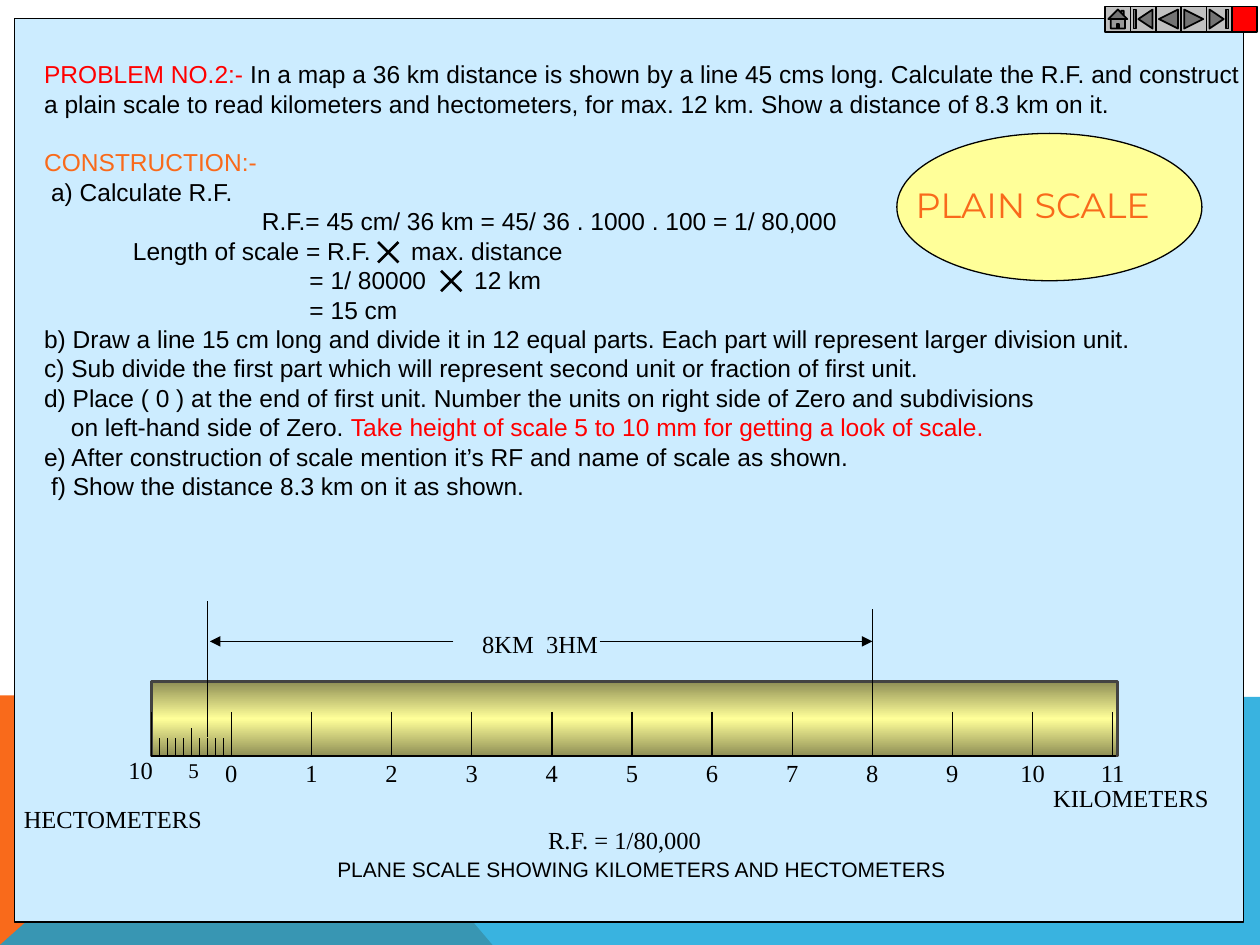
from copy import deepcopy
from dataclasses import dataclass

from lxml import etree
from pptx import Presentation
from pptx import util as u
from pptx.dml.color import RGBColor
from pptx.enum import shapes, text
from pptx.oxml.ns import qn

KIND = shapes.MSO_SHAPE


@dataclass(frozen=True)
class Theme:
    black: str = "000000"
    red: str = "FF0000"
    orange: str = "F96A1B"
    blue: str = "08A1D9"
    sky: str = "CCECFF"
    yellow: str = "FFFF99"
    olive: str = "8F8F56"
    edge: str = "434342"
    grey: str = "C0C0C0"
    sans: str = "Arial"
    serif: str = "Times New Roman"
    title: str = "Montserrat"
    small: int = 12
    body: int = 14
    large: int = 20
    pitch: float = 16.8


T = Theme()
LEFT, UNIT, BASE = 3.05, 1.615, 15.24
ZERO = LEFT + UNIT

STEPS = [
    ([("PROBLEM NO.2:-", T.red),
      (" In a map a 36 km distance is shown by a line 45 cms long. "
       "Calculate the R.F. and construct", T.black)], ()),
    ("a plain scale to read kilometers and hectometers, for max. 12 km. "
     "Show a distance of 8.3 km on it.", ()),
    ([("CONSTRUCTION:-", T.orange)], ()),
    ("\ta) Calculate R.F.", (0.14,)),
    ("\tR.F.= 45 cm/ 36 km = 45/ 36 . 1000 . 100 = 1/ 80,000", (4.39,)),
    ("\tLength of scale = R.F.\tmax. distance", (1.79, 7.4)),
    ("\t= 1/ 80000\t12 km", (5.35, 8.67)),
    ("\t= 15 cm", (5.35,)),
    ("b) Draw a line 15 cm long and divide it in 12 equal parts. "
     "Each part will represent larger division unit.", ()),
    ("c) Sub divide the first part which will represent second unit "
     "or fraction of first unit.", ()),
    ("d) Place ( 0 ) at the end of first unit. Number the units on right side "
     "of Zero and subdivisions", ()),
    ([("\ton left-hand side of Zero. ", T.black),
      ("Take height of scale 5 to 10 mm for getting a look of scale.", T.red)],
     (0.54,)),
    ("e) After construction of scale mention it’s RF and name of scale "
     "as shown.", ()),
    ("\tf) Show the distance 8.3 km on it as shown.", (0.14,)),
]


def rgb(code):
    return RGBColor.from_string(code)


def cms(*nums):
    return [u.Cm(n) for n in nums]


def paint(shape, fill, line=None, width=0.75):
    shape.shadow.inherit = False
    shape.fill.solid()
    shape.fill.fore_color.rgb = rgb(fill)
    if line:
        shape.line.color.rgb = rgb(line)
        shape.line.width = u.Pt(width)
    else:
        shape.line.fill.background()


def block(slide, kind, box, fill, line=T.black, width=0.75):
    shape = slide.shapes.add_shape(kind, *cms(*box))
    paint(shape, fill, line, width)
    return shape


def outline(slide, points, fill, alpha=None):
    spots = [tuple(cms(*p)) for p in points]
    form = slide.shapes.build_freeform(*spots[0])
    form.add_line_segments(spots[1:], close=True)
    shape = form.convert_to_shape()
    paint(shape, fill)
    if alpha:
        color = shape._element.spPr.find(".//" + qn("a:srgbClr"))
        etree.SubElement(color, qn("a:alpha")).set("val", str(alpha * 1000))


def shade(shape, colors):
    shape.fill.gradient()
    shape.fill.gradient_angle = 90
    stops = shape._element.spPr.find(".//" + qn("a:gsLst"))
    stops.append(deepcopy(stops[-1]))
    for i, (stop, color) in enumerate(zip(shape.fill.gradient_stops, colors)):
        stop.color.rgb = rgb(color)
        stop.position = i / 2


def rule(slide, x1, y1, x2, y2, width=0.75, arrow=False):
    line = slide.shapes.add_connector(
        shapes.MSO_CONNECTOR.STRAIGHT, *cms(x1, y1, x2, y2))
    line.line.color.rgb = rgb(T.black)
    line.line.width = u.Pt(width)
    props = line._element.spPr
    if arrow:
        tail = etree.SubElement(props.find(qn("a:ln")), qn("a:tailEnd"))
        tail.set("type", "triangle")
    etree.SubElement(props, qn("a:effectLst"))


def set_tabs(para, stops):
    tabs = etree.SubElement(para._p.get_or_add_pPr(), qn("a:tabLst"))
    for stop in stops:
        tab = etree.SubElement(tabs, qn("a:tab"))
        tab.set("pos", str(u.Cm(stop)))
        tab.set("algn", "l")


def write(slide, words, box, font=T.serif, size=T.body, color=T.black,
          align=text.PP_ALIGN.LEFT, pitch=None, stops=(), gaps=()):
    frame = slide.shapes.add_textbox(*cms(*box)).text_frame
    frame.word_wrap = True
    rows = [(words, stops)] if isinstance(words, str) else words
    for i, (runs, tabs) in enumerate(rows):
        para = frame.add_paragraph() if i else frame.paragraphs[0]
        para.alignment = align
        if pitch:
            para.line_spacing = u.Pt(pitch)
        if i in gaps:
            para.space_before = u.Pt(pitch)
        if tabs:
            set_tabs(para, tabs)
        for part, tint in [(runs, color)] if isinstance(runs, str) else runs:
            run = para.add_run()
            run.text = part
            run.font.name = font
            run.font.size = u.Pt(size)
            run.font.color.rgb = rgb(tint)


def cross(slide, x, y, side=0.41):
    rule(slide, x, y, x + side, y + side, 1.5)
    rule(slide, x + side, y, x, y + side, 1.5)


def back(slide):
    outline(slide, [(0, 19.05), (0, 14.02), (5.66, 14.02), (9.93, 19.05)],
            T.orange)
    outline(slide, [(0, 19.05), (5.66, 14.02), (25.4, 14.05), (25.4, 19.05)],
            T.blue, 80)
    block(slide, KIND.RECTANGLE, (0.3, 0.38, 24.77, 18.21), T.sky)


def ruler(slide):
    bar = block(slide, KIND.RECTANGLE, (LEFT, 13.74, 19.48, 1.5),
                T.yellow, T.edge, 1.5)
    shade(bar, (T.olive, T.yellow, T.olive))
    rule(slide, LEFT, BASE, 22.5, BASE)
    for i in range(13):
        x = LEFT + i * UNIT
        rule(slide, x, 14.35, x, BASE)
        if i:
            write(slide, str(i - 1), (x - 0.6, 15.16, 1.2, 0.83),
                  align=text.PP_ALIGN.CENTER)
    for i in range(1, 10):
        x = LEFT + i * UNIT / 10
        rule(slide, x, 14.68 if i == 5 else 14.88, x, BASE)
    write(slide, "10", (2.34, 15.1, 1.02, 0.83))
    write(slide, "5", (3.55, 15.14, 0.72, 0.76), size=T.small)


def span(slide):
    start, end, y = ZERO - 0.3 * UNIT, ZERO + 8 * UNIT, 12.93
    rule(slide, start, 14.86, start, 12.12)
    rule(slide, end, 14.6, end, 12.27)
    rule(slide, 12.09, y, end, y, arrow=True)
    rule(slide, 9.14, y, start + 0.05, y, arrow=True)
    write(slide, "8KM\t3HM", (9.47, 12.55, 3.1, 0.83), stops=(1.29,))


def badge(slide):
    block(slide, KIND.OVAL, (18.08, 2.69, 6.15, 2.97), T.yellow)
    write(slide, "PLAIN SCALE", (18.21, 3.58, 5.97, 1.1),
          font=T.title, size=T.large, color=T.orange)


def buttons(slide):
    kinds = (KIND.ACTION_BUTTON_HOME, KIND.ACTION_BUTTON_BEGINNING,
             KIND.ACTION_BUTTON_BACK_OR_PREVIOUS,
             KIND.ACTION_BUTTON_FORWARD_OR_NEXT,
             KIND.ACTION_BUTTON_END, KIND.ACTION_BUTTON_CUSTOM)
    for i, kind in enumerate(kinds):
        fill = T.red if kind == KIND.ACTION_BUTTON_CUSTOM else T.grey
        block(slide, kind, (22.28 + i * 0.51, 0.13, 0.51, 0.51), fill, width=1)


def main():
    deck = Presentation()
    deck.slide_width, deck.slide_height = cms(25.4, 19.05)
    slide = deck.slides.add_slide(deck.slide_layouts[6])
    back(slide)
    write(slide, STEPS, (0.64, 1.07, 24.76, 9.12), font=T.sans,
          pitch=T.pitch, gaps=(2,))
    cross(slide, 7.62, 4.88)
    cross(slide, 8.89, 5.46)
    ruler(slide)
    span(slide)
    write(slide, "KILOMETERS", (20.98, 15.67, 3.89, 0.83))
    write(slide, "HECTOMETERS", (0.23, 16.08, 4.39, 0.83))
    write(slide, "R.F. = 1/80,000", (10.8, 16.51, 3.68, 0.83))
    write(slide, "PLANE SCALE SHOWING KILOMETERS AND HECTOMETERS",
          (6.55, 17.15, 12.98, 0.76), font=T.sans, size=T.small)
    badge(slide)
    buttons(slide)
    deck.save("out.pptx")


if __name__ == "__main__":
    main()
